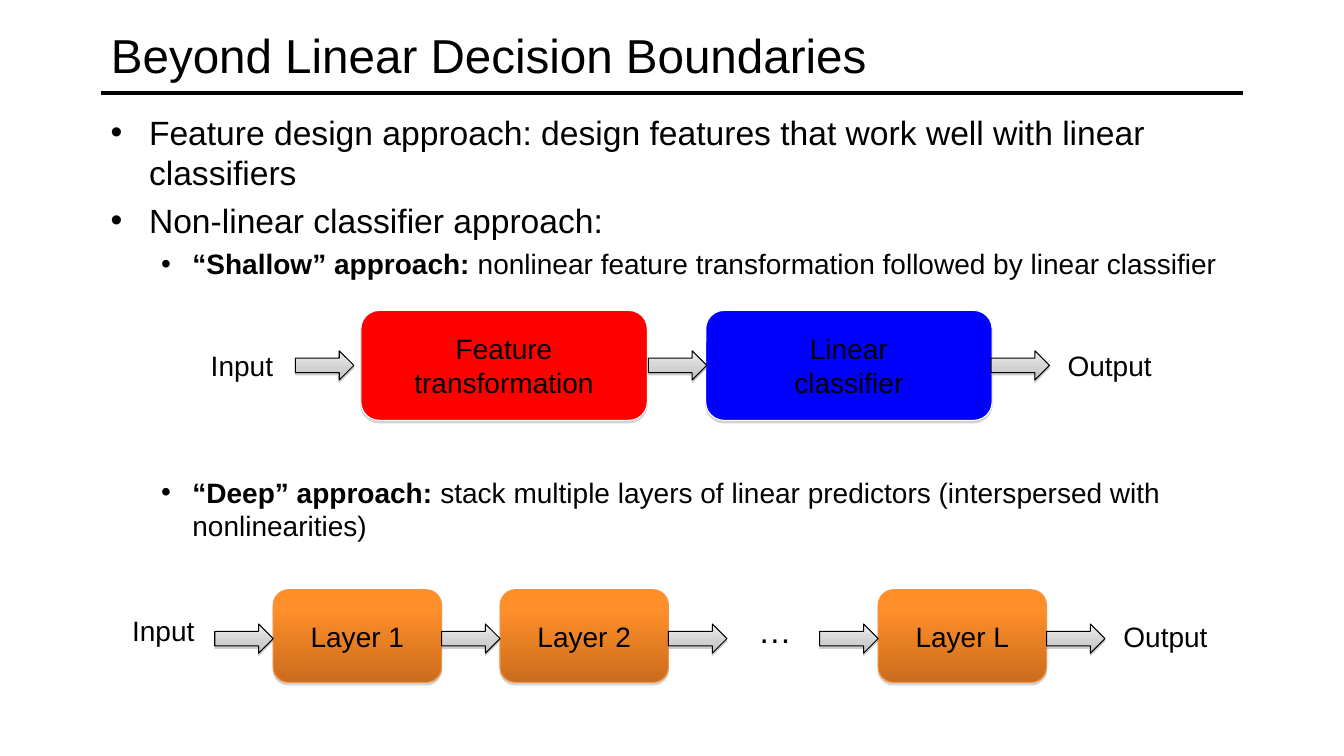
import dataclasses

import lxml.etree
import pptx
import pptx.dml.color
import pptx.enum.shapes
import pptx.enum.text
import pptx.oxml.ns
import pptx.util

Inches = pptx.util.Inches
Pt = pptx.util.Pt
Shapes = pptx.enum.shapes.MSO_SHAPE
Align = pptx.enum.text.PP_ALIGN
Anchor = pptx.enum.text.MSO_ANCHOR
qn = pptx.oxml.ns.qn


@dataclasses.dataclass(frozen=True)
class Theme:
    font: str = "Arial"
    ink: str = "000000"
    paper: str = "FFFFFF"
    transformation: str = "FF0000"
    classifier: str = "0000FF"
    layer_edge: str = "F69240"
    layer: tuple = ((0, "FF8F26"), (20, "FF8F2A"), (100, "CB6C1D"))
    arrow: tuple = ((0, "EDEDED"), (65, "D0D0D0"), (100, "BCBCBC"))
    shadow: str = "808080"
    title_size: int = 34
    point_size: int = 24
    label_size: int = 20


def rgb(value):
    return pptx.dml.color.RGBColor.from_string(value)


def add_node(parent, tag, **attributes):
    node = lxml.etree.SubElement(parent, qn(tag))
    for name, value in attributes.items():
        node.set(name, str(value))
    return node


class SlideBuilder:
    def __init__(self, slide, theme):
        self.slide = slide
        self.theme = theme

    def style(self, paragraph, size, align=Align.LEFT):
        paragraph.alignment = align
        paragraph.font.name = self.theme.font
        paragraph.font.size = Pt(size)
        paragraph.font.color.rgb = rgb(self.theme.ink)

    def title(self, text, left, top, width, height):
        heading = self.slide.shapes.title
        heading.left, heading.top = Inches(left), Inches(top)
        heading.width, heading.height = Inches(width), Inches(height)
        heading.text_frame.text = text
        heading.text_frame.vertical_anchor = Anchor.MIDDLE
        self.style(heading.text_frame.paragraphs[0], self.theme.title_size)

    def rule(self, left, right, top):
        line = self.slide.shapes.add_connector(
            pptx.enum.shapes.MSO_CONNECTOR.STRAIGHT,
            Inches(left), Inches(top), Inches(right), Inches(top))
        line.line.color.rgb = rgb(self.theme.ink)
        line.line.width = Pt(3)
        add_node(line.element.spPr, "a:effectLst")

    def points(self, items, left, top, width, height):
        frame = self.slide.shapes.add_textbox(
            Inches(left), Inches(top), Inches(width), Inches(height)).text_frame
        frame.word_wrap = True
        for number, (level, lead, text, before) in enumerate(items):
            point = frame.paragraphs[0] if number == 0 else frame.add_paragraph()
            point.level = level
            point.space_before = Pt(before)
            margin, hang = ((0.38, 0.38), (0.81, 0.31))[level]
            properties = point._p.get_or_add_pPr()
            properties.set("marL", str(Inches(margin)))
            properties.set("indent", str(-Inches(hang)))
            add_node(properties, "a:buFont", typeface=self.theme.font)
            add_node(properties, "a:buChar", char="•")
            self.style(point, self.theme.label_size if level else self.theme.point_size)
            if lead:
                opening = point.add_run()
                opening.text = lead
                opening.font.bold = True
            point.add_run().text = text

    def label(self, text, left, top, width, height, size=None, align=Align.CENTER):
        frame = self.slide.shapes.add_textbox(
            Inches(left), Inches(top), Inches(width), Inches(height)).text_frame
        frame.word_wrap = True
        frame.text = text
        self.style(frame.paragraphs[0], size or self.theme.label_size, align)

    def shape(self, kind, left, top, width, height, fill, edge, opacity, distance):
        shape = self.slide.shapes.add_shape(
            kind, Inches(left), Inches(top), Inches(width), Inches(height))
        if isinstance(fill, str):
            shape.fill.solid()
            shape.fill.fore_color.rgb = rgb(fill)
        else:
            shape.fill.gradient()
            shape.fill.gradient_angle = 270
            stops = shape.element.spPr.find(".//" + qn("a:gsLst"))
            for stop in list(stops):
                stops.remove(stop)
            for position, color in fill:
                stop = add_node(stops, "a:gs", pos=position * 1000)
                add_node(stop, "a:srgbClr", val=color)
        shape.line.color.rgb = rgb(edge)
        shape.line.width = Pt(0.75)
        shape.shadow.inherit = False
        effects = shape.element.spPr.find(qn("a:effectLst"))
        shadow = add_node(effects, "a:outerShdw", blurRad=0, dist=Pt(distance),
                          dir=90 * 60000, rotWithShape=0)
        shade = add_node(shadow, "a:srgbClr", val=self.theme.shadow)
        add_node(shade, "a:alpha", val=opacity * 1000)
        return shape

    def stage(self, text, left, top, width, height, fill, edge):
        box = self.shape(Shapes.ROUNDED_RECTANGLE, left, top, width, height,
                         fill, edge, 35, 1.8)
        frame = box.text_frame
        frame.word_wrap = True
        frame.vertical_anchor = Anchor.MIDDLE
        frame.text = text
        self.style(frame.paragraphs[0], self.theme.label_size, Align.CENTER)

    def arrow(self, left, top):
        self.shape(Shapes.RIGHT_ARROW, left, top, 0.58, 0.29,
                   self.theme.arrow, self.theme.ink, 38, 1.6)


def main():
    theme = Theme()
    deck = pptx.Presentation()
    deck.slide_width, deck.slide_height = Inches(13.33), Inches(7.5)
    builder = SlideBuilder(deck.slides.add_slide(deck.slide_layouts[5]), theme)

    builder.rule(1, 12.33, 0.92)
    builder.title("Beyond Linear Decision Boundaries", 1, 0.08, 11.33, 0.92)
    builder.points([
        (0, "", "Feature design approach: design features that work well "
                "with linear classifiers", 0),
        (0, "", "Non-linear classifier approach:", 5.5),
        (1, "“Shallow” approach: ",
         "nonlinear feature transformation followed by linear classifier", 4.6),
        (1, "“Deep” approach: ",
         "stack multiple layers of linear predictors (interspersed with "
         "nonlinearities)", 139),
    ], 1, 1.06, 11.33, 5.69)

    for text, left, fill in (("Feature transformation", 3.58, theme.transformation),
                             ("Linear\vclassifier", 7, theme.classifier)):
        builder.stage(text, left, 3.08, 2.84, 1.09, fill, theme.paper)
    for left in (2.93, 6.43, 9.83):
        builder.arrow(left, 3.48)
    builder.label("Input", 1.62, 3.41, 1.56, 0.44)
    builder.label("Output", 10.49, 3.41, 1.34, 0.44, align=Align.LEFT)

    arrow_width, layer_width = 0.58, 1.67
    for text, left in (("Layer 1", 2.71), ("Layer 2", 4.96), ("Layer L", 8.71)):
        builder.stage(text, left, 5.85, layer_width, 0.92, theme.layer, theme.layer_edge)
        builder.arrow(left - arrow_width, 6.19)
        if text != "Layer 1":
            builder.arrow(left + layer_width, 6.19)
    builder.label("Input", 1, 6.04, 1.24, 0.44)
    builder.label("…", 7.42, 6, 0.54, 0.5, theme.point_size, Align.LEFT)
    builder.label("Output", 11.04, 6.1, 1.04, 0.44)

    deck.save("out.pptx")


if __name__ == "__main__":
    main()
